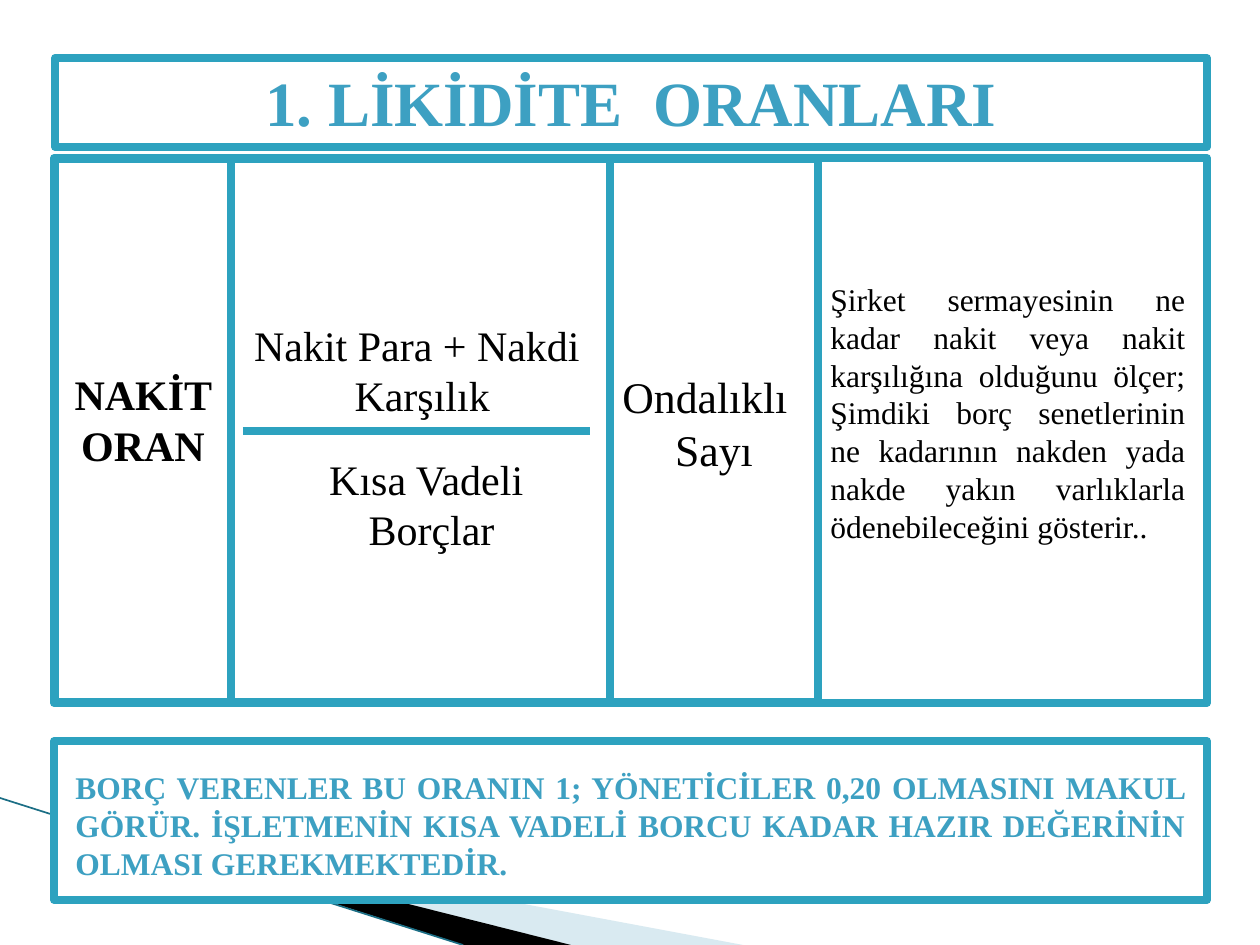
"""Build the liquidity ratio slide: title, four-column ratio grid and a rule of thumb."""
from dataclasses import dataclass, field
from typing import Optional

from lxml import etree
from pptx import Presentation
from pptx.dml.color import RGBColor
from pptx.enum.shapes import MSO_CONNECTOR, MSO_SHAPE
from pptx.enum.text import MSO_ANCHOR, PP_ALIGN
from pptx.oxml.ns import qn
from pptx.util import Emu, Pt

EMU_PER_PX = 914400 / 126
PAGE_WIDTH, PAGE_HEIGHT = 1260, 945
FONT = "Times New Roman"
FRAME_WIDTH = 4.33

TEAL = RGBColor(0x2D, 0xA2, 0xBF)
HEADING = RGBColor(0x3D, 0xA0, 0xC2)
DARK_TEAL = RGBColor(0x1B, 0x6E, 0x85)
PALE_BLUE = RGBColor(0xA0, 0xCB, 0xDC)
BLACK = RGBColor(0, 0, 0)
WHITE = RGBColor(0xFF, 0xFF, 0xFF)

RECTANGLE = MSO_SHAPE.RECTANGLE
STRAIGHT = MSO_CONNECTOR.STRAIGHT
TOP, MIDDLE = MSO_ANCHOR.TOP, MSO_ANCHOR.MIDDLE
LEFT, CENTER, JUSTIFY = PP_ALIGN.LEFT, PP_ALIGN.CENTER, PP_ALIGN.JUSTIFY


@dataclass
class Line:
    text: str
    align: PP_ALIGN = CENTER


@dataclass
class Box:
    left: int
    top: int
    width: int
    height: int
    lines: list[Line] = field(default_factory=list)
    size: int = 24
    bold: bool = False
    color: RGBColor = BLACK
    top_inset: int = 6
    anchor: MSO_ANCHOR = TOP
    wrap: bool = True
    framed: bool = True
    fill: Optional[RGBColor] = None


@dataclass
class Rule:
    start: tuple[int, int]
    end: tuple[int, int]
    color: RGBColor
    width: float


@dataclass
class Band:
    points: list[tuple[int, int]]
    color: RGBColor
    opacity: int = 100


BANDS = [
    Band([(69, 819), (743, 945), (570, 945)], PALE_BLUE, 40),
    Band([(67, 818), (571, 945), (464, 945)], BLACK),
]
EDGE_RULE = Rule((0, 798), (463, 945), DARK_TEAL, 0.95)
FRACTION_RULE = Rule((243, 431), (590, 431), TEAL, 5)

GRID_TOP, GRID_HEIGHT = 159, 543
BOXES = [
    Box(55, GRID_TOP, 176, GRID_HEIGHT, [Line("NAKİT ORAN")], bold=True, top_inset=210),
    Box(231, GRID_TOP, 379, GRID_HEIGHT),
    Box(610, GRID_TOP, 208, GRID_HEIGHT,
        [Line("Ondalıklı", LEFT), Line("Sayı")], size=25, top_inset=211),
    Box(818, GRID_TOP, 380, GRID_HEIGHT,
        [Line("Şirket sermayesinin ne kadar nakit veya nakit karşılığına olduğunu "
              "ölçer; Şimdiki borç senetlerinin ne kadarının nakden yada nakde yakın "
              "varlıklarla ödenebileceğini gösterir..", JUSTIFY)],
        size=18, top_inset=121, framed=False),
    Box(54, 158, 1153, 545),
    Box(233, 296, 368, 147, [Line("Nakit Para + Nakdi"), Line(" Karşılık")],
        anchor=MIDDLE, wrap=False, framed=False),
    Box(253, 441, 357, 126, [Line("Kısa Vadeli "), Line("Borçlar")],
        anchor=MIDDLE, wrap=False, framed=False),
    Box(55, 58, 1152, 89, [Line("1. LİKİDİTE  ORANLARI")],
        size=36, bold=True, color=HEADING, fill=WHITE),
    Box(54, 741, 1153, 159, fill=WHITE),
    Box(63, 762, 1135, 127,
        [Line("BORÇ VERENLER BU ORANIN 1; YÖNETİCİLER 0,20 OLMASINI MAKUL GÖRÜR. "
              "İŞLETMENİN KISA VADELİ BORCU KADAR HAZIR DEĞERİNİN OLMASI "
              "GEREKMEKTEDİR.", JUSTIFY)],
        size=18, bold=True, color=HEADING, framed=False),
]


def px(value: int) -> Emu:
    """Turn whole pixels into EMU."""
    return Emu(round(value * EMU_PER_PX))


def apply_format(target, values: dict) -> None:
    """Set each named attribute on the target."""
    for name, value in values.items():
        setattr(target, name, value)


def draw_band(page, band: Band) -> None:
    """Draw one filled corner band."""
    builder = page.shapes.build_freeform(*band.points[0], scale=EMU_PER_PX)
    builder.add_line_segments(band.points[1:], close=True)
    shape = builder.convert_to_shape()
    shape.shadow.inherit = False
    shape.line.fill.background()
    shape.fill.solid()
    shape.fill.fore_color.rgb = band.color
    if band.opacity < 100:
        color = shape.fill._xPr.find(".//" + qn("a:srgbClr"))
        etree.SubElement(color, qn("a:alpha")).set("val", str(band.opacity * 1000))


def draw_rule(page, rule: Rule) -> None:
    """Draw one straight line."""
    connector = page.shapes.add_connector(
        STRAIGHT, *(px(value) for value in rule.start + rule.end))
    connector.line.color.rgb = rule.color
    connector.line.width = Pt(rule.width)
    etree.SubElement(connector._element.spPr, qn("a:effectLst"))


def write_lines(shape, box: Box) -> None:
    """Write the lines of a box into its shape."""
    frame = shape.text_frame
    apply_format(frame, {"word_wrap": box.wrap, "vertical_anchor": box.anchor,
                         "margin_top": px(box.top_inset)})
    for index, line in enumerate(box.lines):
        para = frame.paragraphs[0] if index == 0 else frame.add_paragraph()
        para.alignment = line.align
        span = para.add_run()
        span.text = line.text
        apply_format(span.font, {"name": FONT, "size": Pt(box.size), "bold": box.bold})
        span.font.color.rgb = box.color


def draw_box(page, box: Box) -> None:
    """Draw one framed rectangle or plain text box."""
    bounds = [px(value) for value in (box.left, box.top, box.width, box.height)]
    if box.framed:
        shape = page.shapes.add_shape(RECTANGLE, *bounds)
        shape.shadow.inherit = False
        shape.line.color.rgb = TEAL
        shape.line.width = Pt(FRAME_WIDTH)
        if box.fill is None:
            shape.fill.background()
        else:
            shape.fill.solid()
            shape.fill.fore_color.rgb = box.fill
    else:
        shape = page.shapes.add_textbox(*bounds)
    if box.lines:
        write_lines(shape, box)


def main() -> None:
    """Assemble and save the deck."""
    deck = Presentation()
    apply_format(deck, {"slide_width": px(PAGE_WIDTH), "slide_height": px(PAGE_HEIGHT)})
    page = deck.slides.add_slide(deck.slide_layouts[6])
    for band in BANDS:
        draw_band(page, band)
    draw_rule(page, EDGE_RULE)
    for box in BOXES:
        draw_box(page, box)
    draw_rule(page, FRACTION_RULE)
    deck.save("out.pptx")


if __name__ == "__main__":
    main()
